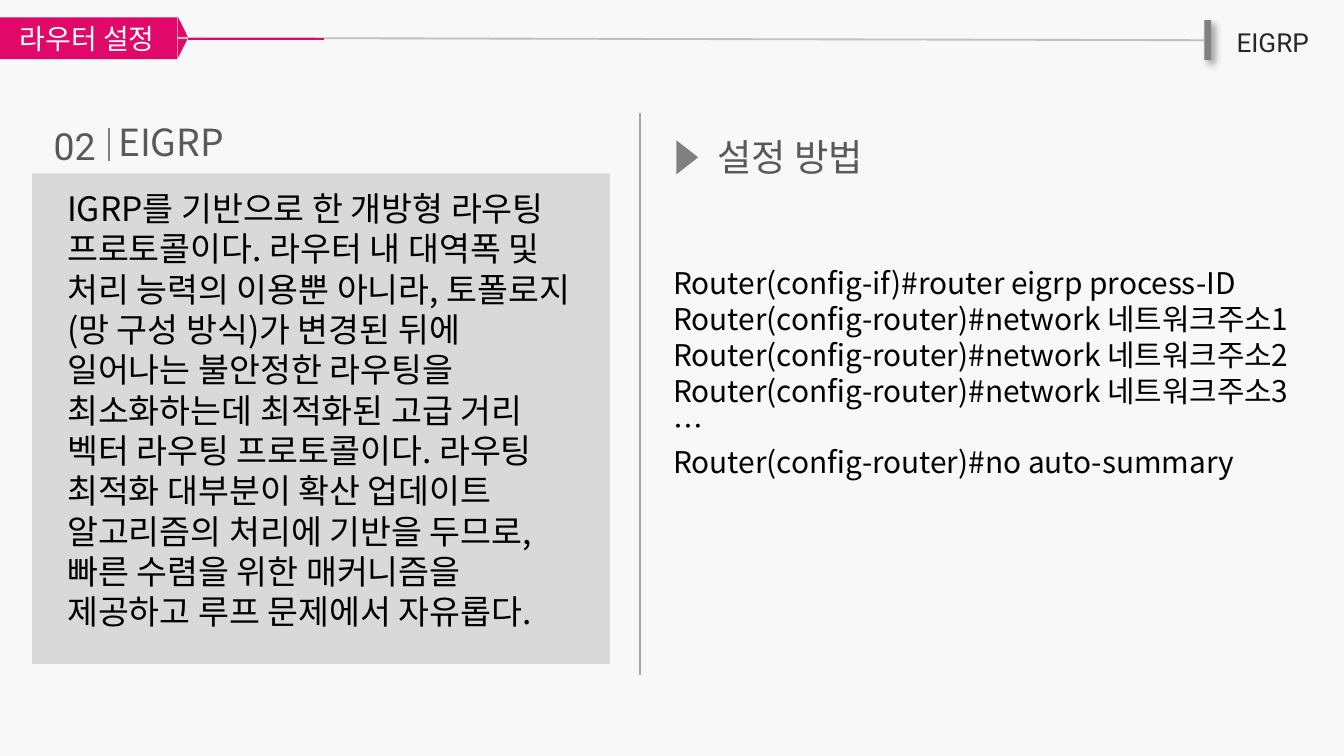
import pptx
import pptx.dml.color
import pptx.enum.shapes
import pptx.enum.text
import pptx.oxml
import pptx.oxml.ns
import pptx.util
from pptx.util import Cm

THEME = {
    "sans": "Noto Sans CJK KR", "latin": "Roboto",
    "background": "F8F8F8", "accent": "E00868", "white": "FFFFFF",
    "black": "000000", "ink": "262626", "heading": "595959",
    "marker": "808080", "divider": "A6A6A6", "rule": "BFBFBF", "panel": "D9D9D9",
    "label_size": 14, "tag_size": 15, "code_size": 16, "body_size": 18,
    "heading_size": 20,
}
LINE_HEIGHT = 1.2
SHAPE = pptx.enum.shapes.MSO_SHAPE
ALIGN = pptx.enum.text.PP_ALIGN
ANCHOR = pptx.enum.text.MSO_ANCHOR


def rgb(name):
    return pptx.dml.color.RGBColor.from_string(THEME[name])


def write(sp, text, size, color, font="sans", align=ALIGN.LEFT, anchor=ANCHOR.TOP, wrap=True):
    """Fill a shape with one paragraph per line of text."""
    tf = sp.text_frame
    tf.text = text
    tf.word_wrap = wrap
    tf.auto_size = pptx.enum.text.MSO_AUTO_SIZE.NONE
    tf.vertical_anchor = anchor
    for p in tf.paragraphs:
        p.alignment = align
        p.space_before = pptx.util.Pt(0)
        p.line_spacing = pptx.util.Pt(THEME[size] * LINE_HEIGHT)
        r = p.runs[0]
        r.font.size = pptx.util.Pt(THEME[size])
        r.font.name = THEME[font]
        r.font.color.rgb = rgb(color)
        ea = r.font._element.makeelement(pptx.oxml.ns.qn("a:ea"), {"typeface": THEME[font]})
        r.font._element.append(ea)


prs = pptx.Presentation()
prs.slide_width, prs.slide_height = Cm(25.4), Cm(14.29)
s = prs.slides.add_slide(prs.slide_layouts[1])
s.background.fill.solid()
s.background.fill.fore_color.rgb = rgb("background")
title, commands = s.placeholders

# Plain shapes: kind, left, top, width, height, rotation, fill
shapes = []
for kind, x, y, w, h, rotation, color in [
    (SHAPE.RECTANGLE, 22.76, 0.38, 0.13, 0.76, 0, "marker"),
    (SHAPE.ISOSCELES_TRIANGLE, 3.05, 0.61, 0.81, 0.2, 90, "accent"),
    (SHAPE.RECTANGLE, 0.61, 3.28, 10.92, 9.27, 0, "panel"),
    (SHAPE.ISOSCELES_TRIANGLE, 12.67, 2.77, 0.64, 0.41, 90, "marker"),
]:
    sp = s.shapes.add_shape(kind, Cm(x), Cm(y), Cm(w), Cm(h))
    sp.rotation = rotation
    sp.shadow.inherit = False
    sp.fill.solid()
    sp.fill.fore_color.rgb = rgb(color)
    sp.line.fill.background()
    shapes.append(sp)

end_bar = shapes[0]
effects = end_bar._element.spPr.find(pptx.oxml.ns.qn("a:effectLst"))
effects.append(pptx.oxml.parse_xml(
    f'<a:outerShdw {pptx.oxml.ns.nsdecls("a")} blurRad="50800" dist="38100" dir="2700000">'
    '<a:srgbClr val="000000"><a:alpha val="40000"/></a:srgbClr></a:outerShdw>'))

# Lines: start x, start y, end x, end y, colour, width
lines = []
for x1, y1, x2, y2, color, width in [
    (0.89, 0.71, 22.76, 0.76, "rule", 1),
    (3.56, 0.74, 6.12, 0.74, "accent", 1),
    (2.06, 2.41, 2.06, 3.05, "marker", 0.75),
    (12.09, 2.13, 12.09, 12.75, "divider", 1),
]:
    line = s.shapes.add_connector(
        pptx.enum.shapes.MSO_CONNECTOR.STRAIGHT, Cm(x1), Cm(y1), Cm(x2), Cm(y2))
    line.line.color.rgb = rgb(color)
    line.line.width = pptx.util.Pt(width)
    line._element.spPr.append(
        line._element.makeelement(pptx.oxml.ns.qn("a:effectLst"), {}))
    lines.append(line)
lines[0].end_connect(end_bar, 1)

# The title tag lies over the start of the header rule
s.shapes._spTree.append(title._element)
title.left, title.top, title.width, title.height = Cm(-0.05), Cm(0.33), Cm(3.4), Cm(0.79)
title.fill.solid()
title.fill.fore_color.rgb = rgb("accent")
write(title, "라우터 설정", "tag_size", "white", align=ALIGN.CENTER, anchor=ANCHOR.MIDDLE)

for text, x, y, w, h, size, color, font in [
    ("EIGRP", 22.81, 0.38, 2.49, 0.86, "label_size", "ink", "latin"),
    ("EIGRP", 1.9, 2.13, 2.67, 1.12, "heading_size", "heading", "sans"),
    ("02", 0.61, 2.21, 1.6, 1.12, "heading_size", "heading", "latin"),
    ("설정 방법", 13.13, 2.41, 3.61, 1.12, "heading_size", "heading", "sans"),
]:
    sp = s.shapes.add_textbox(Cm(x), Cm(y), Cm(w), Cm(h))
    write(sp, text, size, color, font, align=ALIGN.CENTER)

description = s.shapes.add_textbox(Cm(1.02), Cm(3.43), Cm(10.39), Cm(8.71))
write(description,
      "IGRP를 기반으로 한 개방형 라우팅 프로토콜이다. 라우터 내 대역폭 및 처리 능력의 "
      "이용뿐 아니라, 토폴로지(망 구성 방식)가 변경된 뒤에 일어나는 불안정한 라우팅을 "
      "최소화하는데 최적화된 고급 거리 벡터 라우팅 프로토콜이다. 라우팅 최적화 대부분이 "
      "확산 업데이트 알고리즘의 처리에 기반을 두므로, 빠른 수렴을 위한 매커니즘을 "
      "제공하고 루프 문제에서 자유롭다.",
      "body_size", "black")

commands.left, commands.top = Cm(12.47), Cm(4.88)
commands.width, commands.height = Cm(12.55), Cm(5.13)
networks = [f"Router(config-router)#network 네트워크주소{n}" for n in range(1, 4)]
write(commands,
      "\n".join(["Router(config-if)#router eigrp process-ID", *networks, "…",
                 "Router(config-router)#no auto-summary"]),
      "code_size", "black", wrap=False)
for p in commands.text_frame.paragraphs:
    pPr = p._p.get_or_add_pPr()
    pPr.set("marL", "0")
    pPr.set("indent", "0")
    pPr.append(pPr.makeelement(pptx.oxml.ns.qn("a:buNone"), {}))

prs.save("out.pptx")
